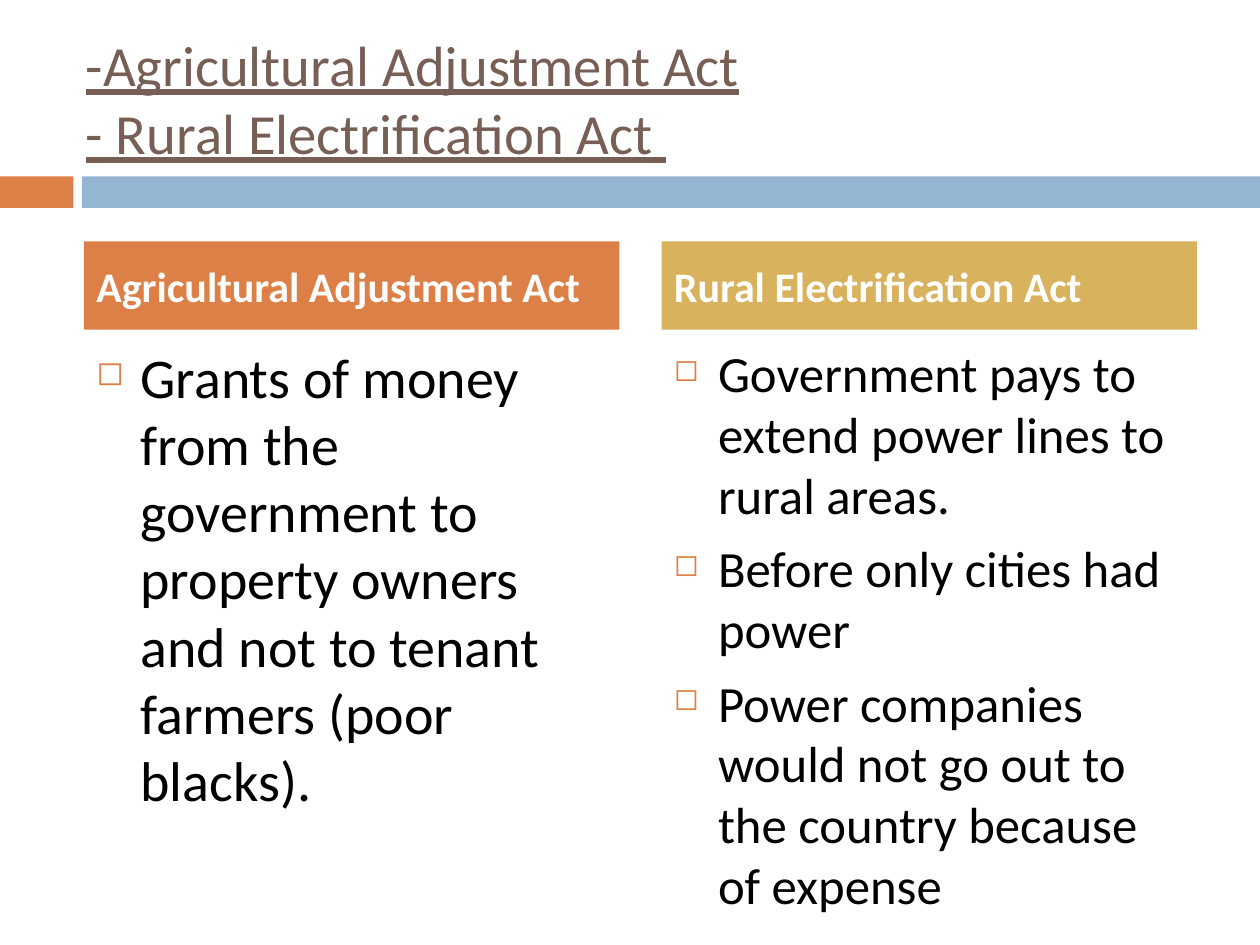
from lxml.etree import SubElement
from pptx import Presentation
from pptx.dml.color import RGBColor
from pptx.enum.shapes import MSO_SHAPE as Shape
from pptx.enum.text import MSO_ANCHOR as Anchor, PP_ALIGN as Align
from pptx.oxml.ns import qn
from pptx.util import Pt

ORANGE = RGBColor(0xDD, 0x80, 0x47)
BLUE = RGBColor(0x94, 0xB6, 0xD2)
GOLD = RGBColor(0xD8, 0xB2, 0x5C)
BROWN = RGBColor(0x77, 0x5F, 0x55)
BLACK = RGBColor(0, 0, 0)
WHITE = RGBColor(0xFF, 0xFF, 0xFF)
FONT = "Calibri"
WIDE = 306
GAP = 7
INDENT = 25.2

COLUMNS = [
    (48, "Agricultural Adjustment Act", ORANGE, 32, [
        "Grants of money from the government to property owners "
        "and not to tenant farmers (poor blacks).",
    ]),
    (378, "Rural Electrification Act", GOLD, 29, [
        "Government pays to extend power lines to rural areas.",
        "Before only cities had power",
        "Power companies would not go out to the country because of expense",
    ]),
]


def add_run(para, text, size, color, bold=False, line=False):
    run = para.add_run()
    run.text = text
    font = run.font
    font.name, font.size, font.bold = FONT, Pt(size), bold
    font.underline = line
    font.color.rgb = color


def add_bar(slide, left, top, width, height, color):
    bar = slide.shapes.add_shape(
        Shape.RECTANGLE, Pt(left), Pt(top), Pt(width), Pt(height))
    bar.shadow.inherit = False
    bar.fill.solid()
    bar.fill.fore_color.rgb = color
    bar.line.fill.background()
    return bar


def add_box(slide, left, top, width, height):
    box = slide.shapes.add_textbox(Pt(left), Pt(top), Pt(width), Pt(height))
    box.text_frame.word_wrap = True
    return box.text_frame


def add_title(slide, lines):
    frame = add_box(slide, 42, 21.6, 642, 68.4)
    frame.vertical_anchor = Anchor.MIDDLE
    para = frame.paragraphs[0]
    for i, text in enumerate(lines):
        if i:
            para.add_line_break()
        add_run(para, text, 32.4, BROWN, line=True)


def add_head(slide, left, text, color):
    frame = add_bar(slide, left, 138, WIDE, 50.4, color).text_frame
    frame.word_wrap = True
    frame.vertical_anchor = Anchor.MIDDLE
    para = frame.paragraphs[0]
    para.alignment = Align.LEFT
    para.space_before = Pt(GAP)
    add_run(para, text, 24, WHITE, bold=True)


def set_bullet(para):
    """Give the paragraph a hanging indent and a small square bullet."""
    props = para._p.get_or_add_pPr()
    props.set("marL", str(Pt(INDENT)))
    props.set("indent", str(-Pt(INDENT)))
    tint = SubElement(props, qn("a:buClr"))
    SubElement(tint, qn("a:srgbClr"), val=str(ORANGE))
    SubElement(props, qn("a:buSzPct"), val="60000")
    SubElement(props, qn("a:buChar"), char="◻")


def add_list(slide, left, size, items):
    frame = add_box(slide, left, 192, WIDE, 315)
    for i, text in enumerate(items):
        para = frame.add_paragraph() if i else frame.paragraphs[0]
        para.space_before = Pt(GAP)
        set_bullet(para)
        add_run(para, text, size, BLACK)


def main():
    deck = Presentation()
    deck.slide_width, deck.slide_height = Pt(720), Pt(540)
    slide = deck.slides.add_slide(deck.slide_layouts[6])
    add_bar(slide, 0, 100.8, 42, 18, ORANGE)
    add_bar(slide, 46.8, 100.8, 673.2, 18, BLUE)
    add_title(slide, ["-Agricultural Adjustment Act",
                      "- Rural Electrification Act "])
    for left, head, color, size, items in COLUMNS:
        add_head(slide, left, head, color)
        add_list(slide, left, size, items)
    deck.save("out.pptx")


if __name__ == "__main__":
    main()
